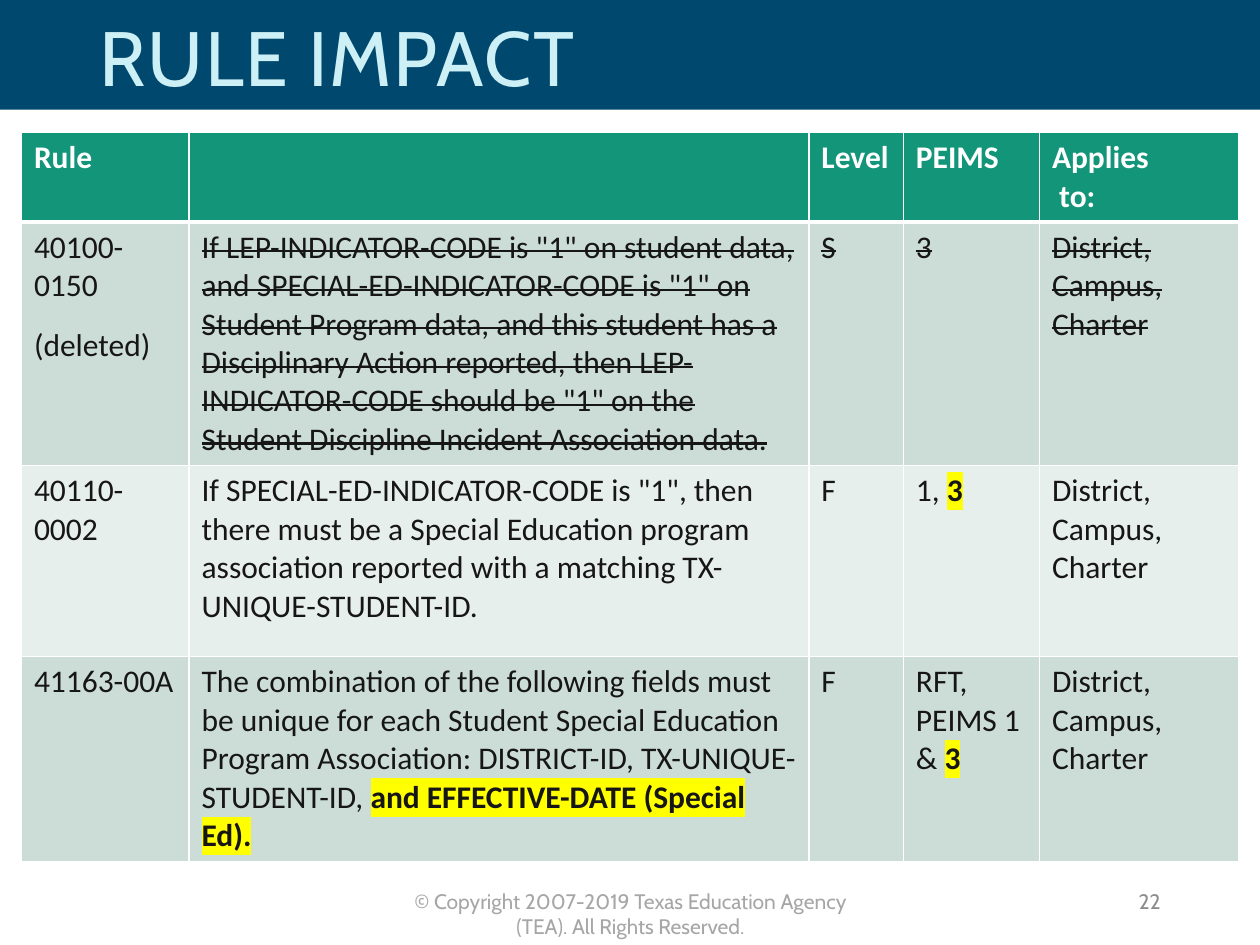
"""Build the Rule Impact slide: a title band, a table of rules and a footer."""
import lxml.etree
import pptx
import pptx.dml.color
import pptx.enum.shapes
import pptx.enum.text
import pptx.oxml.ns
import pptx.util

THEME = {
    "heading_font": "Cabin", "body_font": "Calibri",
    "title_size": 44, "table_size": 18, "footer_size": 12,
    "band": "00486E", "title": "CCF0F5", "header": "129579", "white": "FFFFFF",
    "odd_row": "CCDDD7", "even_row": "E7EFEC", "ink": "171616",
    "highlight": "FFFF00", "copyright": "A6A6A6", "number": "8C8C8C",
}
ALIGN = pptx.enum.text.PP_ALIGN
MIDDLE = pptx.enum.text.MSO_ANCHOR.MIDDLE
qn = pptx.oxml.ns.qn
rgb = pptx.dml.color.RGBColor.from_string

deck = pptx.Presentation()
deck.slide_width = pptx.util.Inches(10)
deck.slide_height = pptx.util.Inches(7.5)


def area(left, top, width, height):
    """Turn percentages of the slide into a position and size."""
    across, down = deck.slide_width / 100, deck.slide_height / 100
    return [round(v) for v in (left * across, top * down, width * across, height * down)]


def write(para, text, size, color, font=THEME["body_font"], bold=False,
          strike=False, highlight=None, tracking=None):
    """Add one formatted span to a paragraph."""
    span = para.add_run()
    span.text = text
    span.font.size = pptx.util.Pt(size)
    span.font.name = font
    span.font.bold = bold
    span.font.color.rgb = rgb(color)
    properties = span.font._element
    if strike:
        properties.set("strike", "sngStrike")
    if tracking:
        properties.set("spc", str(tracking))
    if highlight:
        marker = lxml.etree.Element(qn("a:highlight"))
        lxml.etree.SubElement(marker, qn("a:srgbClr"), val=highlight)
        properties.find(qn("a:solidFill")).addnext(marker)


page = deck.slides.add_slide(deck.slide_layouts[5])

band = page.shapes.add_shape(pptx.enum.shapes.MSO_SHAPE.RECTANGLE, *area(0, 0, 100, 11.6))
band.shadow.inherit = False
band.fill.solid()
band.fill.fore_color.rgb = rgb(THEME["band"])
band.line.fill.background()
page.shapes._spTree.insert(2, band._element)

title = page.shapes.title
title.left, title.top, title.width, title.height = area(6.9, 0.67, 80, 11.6)
title.text_frame.auto_size = pptx.enum.text.MSO_AUTO_SIZE.NONE
title.text_frame.vertical_anchor = MIDDLE
heading = title.text_frame.paragraphs[0]
heading.alignment = ALIGN.LEFT
heading.line_spacing = 0.9
write(heading, "RULE IMPACT", THEME["title_size"], THEME["title"],
      font=THEME["heading_font"], tracking=100)

APPLIES = "District, Campus,\nCharter"
ROWS = [
    ["Rule", "", "Level", "PEIMS", "Applies\n to:"],
    ["40100-0150\n(deleted)",
     'If LEP-INDICATOR-CODE is "1" on student data, and SPECIAL-ED-INDICATOR-CODE is "1" on '
     "Student Program data, and this student has a Disciplinary Action reported, then "
     'LEP-INDICATOR-CODE should be "1" on the Student Discipline Incident Association data.',
     "S", "3", APPLIES],
    ["40110-0002",
     'If SPECIAL-ED-INDICATOR-CODE is "1", then there must be a Special Education program '
     "association reported with a matching TX-UNIQUE-STUDENT-ID.",
     "F", "1, |3", APPLIES],
    ["41163-00A",
     "The combination of the following fields must be unique for each Student Special Education "
     "Program Association: DISTRICT-ID, TX-UNIQUE-STUDENT-ID, "
     "|and EFFECTIVE-DATE (Special Ed).",
     "F", "RFT, PEIMS 1 & |3", APPLIES],
]
COLUMN_SHARES = [13.3, 49.2, 7.5, 10.8, 15.8]
ROW_SHARES = [9.33, 25.8, 20.2, 21.6]
DELETED_ROW = 1

table = page.shapes.add_table(len(ROWS), len(COLUMN_SHARES), *area(
    1.7, 14, sum(COLUMN_SHARES), sum(ROW_SHARES))).table
for column, share in zip(table.columns, COLUMN_SHARES):
    column.width = round(deck.slide_width * share / 100)
for row, share in zip(table.rows, ROW_SHARES):
    row.height = round(deck.slide_height * share / 100)

for r, texts in enumerate(ROWS):
    is_header = r == 0
    fill = THEME["header"] if is_header else THEME["odd_row" if r % 2 else "even_row"]
    for c, text in enumerate(texts):
        cell = table.cell(r, c)
        for edge in ("lnL", "lnR", "lnT", "lnB"):
            thick = (r, edge) in ((0, "lnB"), (1, "lnT"))
            border = lxml.etree.SubElement(cell._tc.get_or_add_tcPr(), qn("a:" + edge),
                                           w=str(pptx.util.Pt(3 if thick else 1)))
            paint = lxml.etree.SubElement(border, qn("a:solidFill"))
            lxml.etree.SubElement(paint, qn("a:srgbClr"), val=THEME["white"])
        cell.fill.solid()
        cell.fill.fore_color.rgb = rgb(fill)
        gap = pptx.util.Pt(0 if is_header or c == len(texts) - 1 else 6)
        for p, line in enumerate(text.split("\n")):
            para = cell.text_frame.add_paragraph() if p else cell.text_frame.paragraphs[0]
            para.space_before = gap if p else 0
            para.space_after = gap
            plain, _, marked = line.partition("|")
            if plain:
                write(para, plain, THEME["table_size"], THEME["white" if is_header else "ink"],
                      bold=is_header, strike=r == DELETED_ROW and c > 0)
            if marked:
                write(para, marked, THEME["table_size"], THEME["ink"], bold=True,
                      highlight=THEME["highlight"])

FOOTERS = [
    ("© Copyright 2007-2019 Texas Education Agency (TEA). All Rights Reserved.",
     (30.4, 93.33, 39.3, 4), ALIGN.CENTER, pptx.enum.text.MSO_ANCHOR.TOP, "copyright"),
    ("22", (70.6, 92.67, 22.5, 5.33), ALIGN.RIGHT, MIDDLE, "number"),
]
for text, place, alignment, anchor, color in FOOTERS:
    box = page.shapes.add_textbox(*area(*place))
    box.text_frame.word_wrap = True
    box.text_frame.vertical_anchor = anchor
    para = box.text_frame.paragraphs[0]
    para.alignment = alignment
    write(para, text, THEME["footer_size"], THEME[color], font=THEME["heading_font"])

deck.save("out.pptx")
